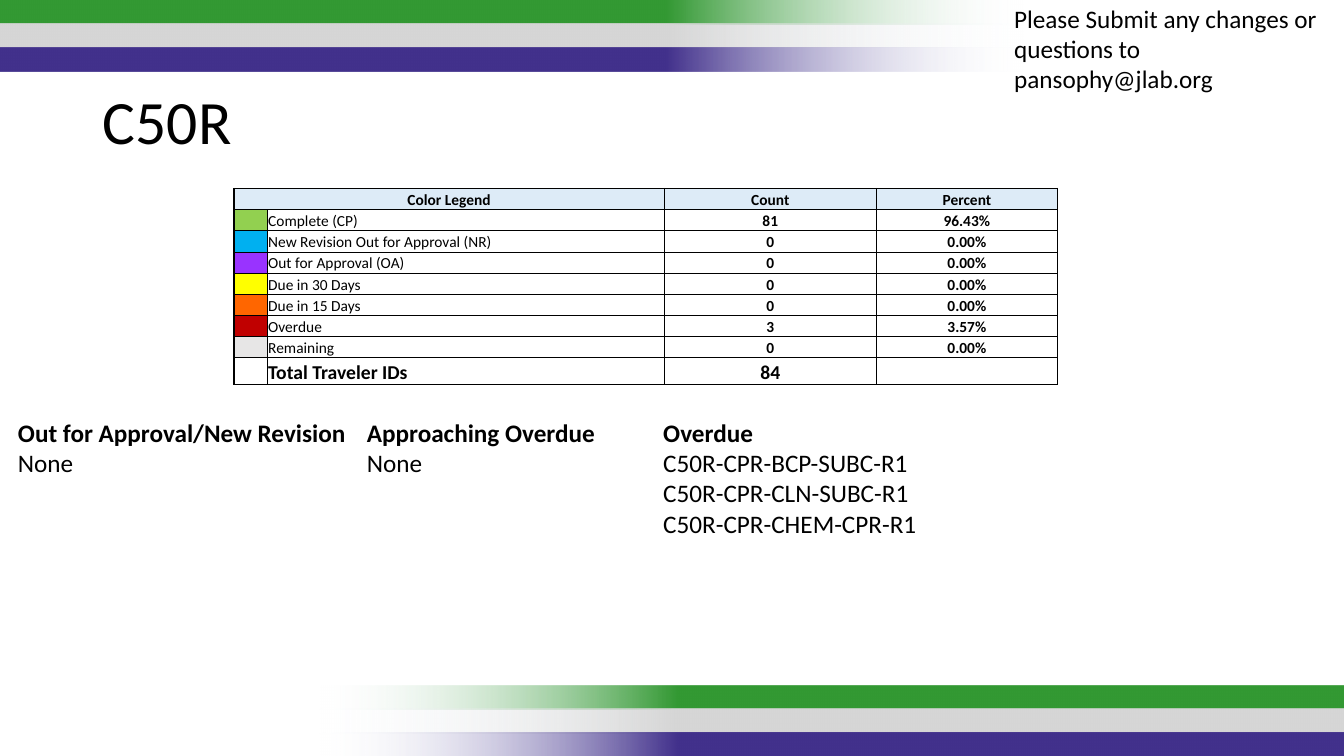
from dataclasses import dataclass

from lxml import etree
from pptx import Presentation
from pptx.dml.color import RGBColor
from pptx.enum.shapes import MSO_SHAPE
from pptx.enum.text import MSO_ANCHOR, MSO_AUTO_SIZE, PP_ALIGN
from pptx.oxml.ns import qn
from pptx.util import Inches, Pt

RECTANGLE = MSO_SHAPE.RECTANGLE
TOP, BOTTOM = MSO_ANCHOR.TOP, MSO_ANCHOR.BOTTOM
LEFT, CENTER = PP_ALIGN.LEFT, PP_ALIGN.CENTER
FIT_SHAPE, NO_FIT = MSO_AUTO_SIZE.SHAPE_TO_FIT_TEXT, MSO_AUTO_SIZE.NONE


@dataclass(frozen=True)
class Theme:
    font: str = "Calibri"
    text: str = "000000"
    header: str = "DDEBF7"
    fade: str = "F7FAFD"
    bands: tuple[str, ...] = ("339933", "D6D6D6", "42318C")
    title_size: int = 44
    body_size: int = 18
    total_size: int = 14
    table_size: int = 11
    outer_line: float = 1
    inner_line: float = 0.5


@dataclass(frozen=True)
class Status:
    color: str
    label: str
    count: int


@dataclass(frozen=True)
class Note:
    left: float
    top: float
    width: float
    height: float
    heading: str
    lines: tuple[str, ...]


THEME = Theme()
STATUSES = (
    Status("92D050", "Complete (CP)", 81),
    Status("00B0F0", "New Revision Out for Approval (NR)", 0),
    Status("9933FF", "Out for Approval (OA)", 0),
    Status("FFFF00", "Due in 30 Days", 0),
    Status("FF6600", "Due in 15 Days", 0),
    Status("C00000", "Overdue", 3),
    Status("E7E6E6", "Remaining", 0),
)
NOTES = (
    Note(0.08, 4.09, 3.45, 0.71, "Out for Approval/New Revision", ("None",)),
    Note(3.54, 4.09, 2.95, 0.71, "Approaching Overdue", ("None",)),
    Note(6.48, 4.09, 6.03, 1.31, "Overdue",
         ("C50R-CPR-BCP-SUBC-R1", "C50R-CPR-CLN-SUBC-R1", "C50R-CPR-CHEM-CPR-R1")),
    Note(9.96, -0.02, 3.38, 1.01, "",
         ("Please Submit any changes or questions to pansophy@jlab.org",)),
)
COLUMN_WIDTHS = (0.33, 3.94, 2.1, 1.8)
ROW_HEIGHT, TOTAL_HEIGHT = 0.21, 0.27
BAND_WIDTH, BAND_HEIGHT, BAND_STEP = 10.17, 0.24, 0.235


def write(paragraph, text: str, size: int, bold: bool = False) -> None:
    run = paragraph.add_run()
    run.text = text
    formats = {"name": THEME.font, "size": Pt(size), "bold": bold}
    for attribute, value in formats.items():
        setattr(run.font, attribute, value)
    run.font.color.rgb = RGBColor.from_string(THEME.text)


def add_bands(slide, left: float, top: float, rotation: int) -> None:
    for index, color in enumerate(THEME.bands):
        band = slide.shapes.add_shape(
            RECTANGLE, Inches(left), Inches(top + index * BAND_STEP),
            Inches(BAND_WIDTH), Inches(BAND_HEIGHT))
        band.rotation = rotation
        band.shadow.inherit = False
        band.line.fill.background()
        band.fill.gradient()
        band.fill.gradient_angle = 0
        stops = zip(band.fill.gradient_stops, (0, 0.35), (THEME.fade, color))
        for stop, position, stop_color in stops:
            stop.position = position
            stop.color.rgb = RGBColor.from_string(stop_color)
        # The first stop is fully transparent
        faded = band.fill._xPr.find(".//" + qn("a:srgbClr"))
        etree.SubElement(faded, qn("a:alpha"), val="0")


def add_note(slide, note: Note) -> None:
    box = slide.shapes.add_textbox(
        Inches(note.left), Inches(note.top), Inches(note.width), Inches(note.height))
    frame = box.text_frame
    frame.word_wrap = True
    frame.auto_size = FIT_SHAPE
    lines = [(note.heading, True)] if note.heading else []
    lines += [(line, False) for line in note.lines]
    for index, (line, bold) in enumerate(lines):
        paragraph = frame.add_paragraph() if index else frame.paragraphs[0]
        write(paragraph, line, THEME.body_size, bold)


def add_border(cell, side: str, width: float) -> None:
    line = etree.SubElement(cell._tc.get_or_add_tcPr(), qn(f"a:{side}"), w=str(Pt(width)))
    fill = etree.SubElement(line, qn("a:solidFill"))
    etree.SubElement(fill, qn("a:srgbClr"), val=THEME.text)


def format_cell(cell, text: str, size: int, bold: bool, centered: bool, fill: str) -> None:
    formats = {
        "vertical_anchor": BOTTOM, "margin_left": Inches(0.01),
        "margin_right": Inches(0.01), "margin_top": Inches(0.01), "margin_bottom": 0,
    }
    for attribute, value in formats.items():
        setattr(cell, attribute, value)
    paragraph = cell.text_frame.paragraphs[0]
    paragraph.alignment = CENTER if centered else LEFT
    if text:
        write(paragraph, text, size, bold)
    else:
        # Keeps an empty cell from stretching its row
        etree.SubElement(paragraph._p, qn("a:endParaRPr"), sz=str(size * 100))
    if fill:
        cell.fill.solid()
        cell.fill.fore_color.rgb = RGBColor.from_string(fill)
    else:
        cell.fill.background()


def add_legend(slide) -> None:
    total = sum(status.count for status in STATUSES)
    rows = [("Color Legend", "", "Count", "Percent")]
    rows += [("", status.label, str(status.count), f"{status.count / total:.2%}")
             for status in STATUSES]
    rows.append(("", "Total Traveler IDs", str(total), ""))
    last_row, last_column = len(rows) - 1, len(COLUMN_WIDTHS) - 1
    heights = [ROW_HEIGHT] * last_row + [TOTAL_HEIGHT]

    table = slide.shapes.add_table(
        len(rows), len(COLUMN_WIDTHS), Inches(2.32), Inches(1.87),
        Inches(sum(COLUMN_WIDTHS)), Inches(sum(heights))).table
    table.first_row = table.horz_banding = False
    for column, width in zip(table.columns, COLUMN_WIDTHS):
        column.width = Inches(width)
    for row, height in zip(table.rows, heights):
        row.height = Inches(height)

    swatches = [THEME.header] + [status.color for status in STATUSES] + [""]
    for r, texts in enumerate(rows):
        for c, text in enumerate(texts):
            cell = table.cell(r, c)
            edges = {"lnL": c == 0, "lnR": c == last_column,
                     "lnT": r == 0, "lnB": r == last_row}
            for side, outer in edges.items():
                add_border(cell, side, THEME.outer_line if outer else THEME.inner_line)
            size = THEME.total_size if r == last_row else THEME.table_size
            fill = swatches[r] if r == 0 or c == 0 else ""
            format_cell(cell, text, size, bold=r in (0, last_row) or c > 1,
                        centered=r == 0 or c > 1, fill=fill)
    table.cell(0, 0).merge(table.cell(0, 1))


def add_title(slide, text: str) -> None:
    title = slide.shapes.title
    bounds = {"left": 0.92, "top": 0.86, "width": 11.5, "height": 0.99}
    for attribute, value in bounds.items():
        setattr(title, attribute, Inches(value))
    frame = title.text_frame
    formats = {"word_wrap": True, "auto_size": NO_FIT, "vertical_anchor": TOP}
    for attribute, value in formats.items():
        setattr(frame, attribute, value)
    paragraph = frame.paragraphs[0]
    paragraph.alignment = LEFT
    paragraph.line_spacing = 0.9
    write(paragraph, text, THEME.title_size)


def main() -> None:
    presentation = Presentation()
    presentation.slide_width, presentation.slide_height = Inches(13.33), Inches(7.5)
    slide = presentation.slides.add_slide(presentation.slide_layouts[5])

    # Colour bands at the top and bottom
    add_bands(slide, -0.01, 0, 180)
    add_bands(slide, 3.17, 6.8, 0)

    # Title, legend table and notes
    add_title(slide, "C50R")
    add_legend(slide)
    for note in NOTES:
        add_note(slide, note)

    presentation.save("out.pptx")


if __name__ == "__main__":
    main()
